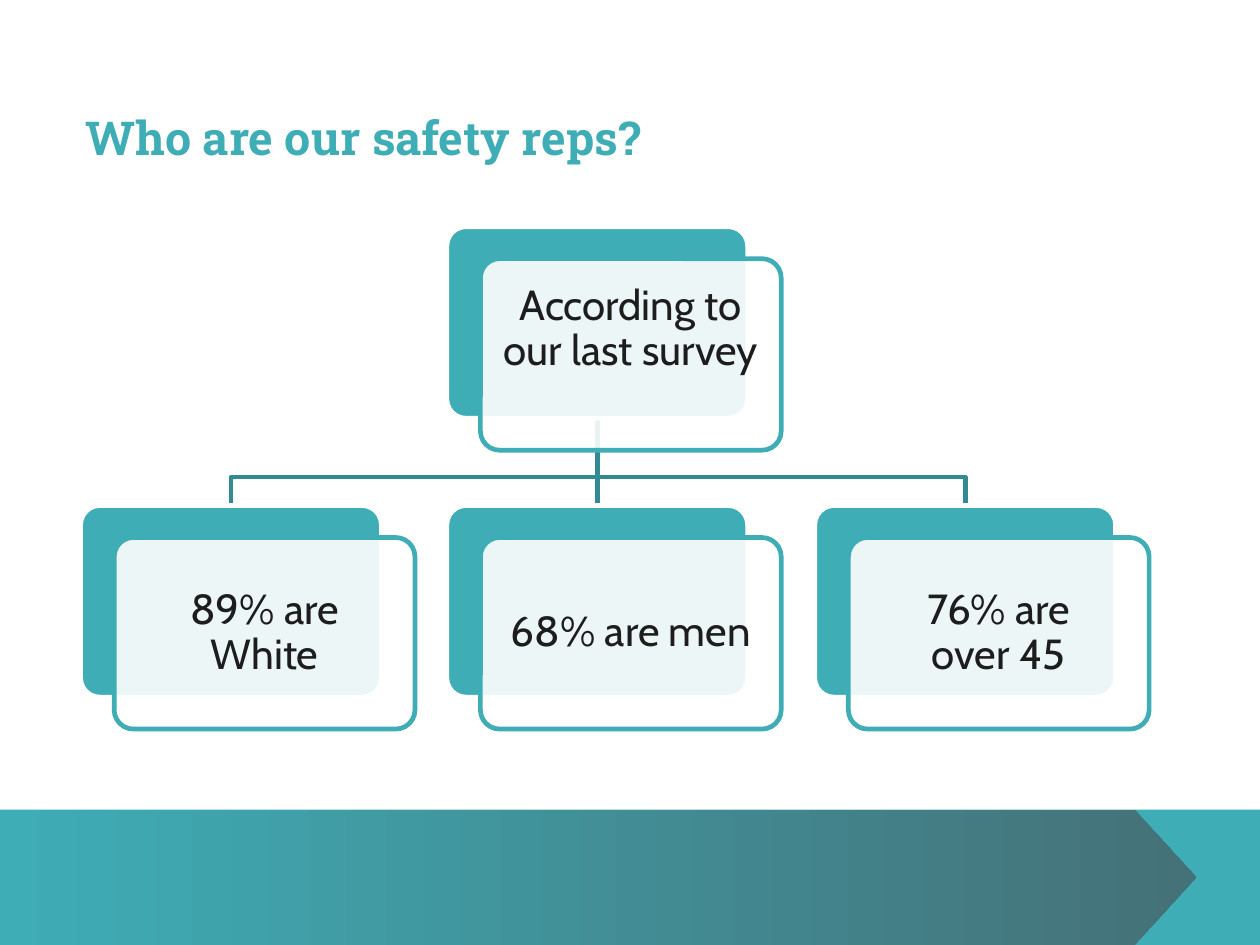
"""Build the safety reps survey slide."""
from lxml import etree
from pptx import Presentation
from pptx.dml.color import RGBColor
from pptx.enum.shapes import MSO_CONNECTOR, MSO_SHAPE as Shape
from pptx.enum.text import MSO_ANCHOR as Anchor, PP_ALIGN as Align
from pptx.oxml.ns import qn
from pptx.util import Inches, Pt

COLORS = {"teal": "3EADB6", "slate": "457178", "branch": "328B92",
          "white": "FFFFFF", "text": "1D1D1D"}
SLIDE_WIDTH = 7.5
SLIDE_HEIGHT = SLIDE_WIDTH * 3 / 4
BAND_TOP = 4.82
BAND_HEIGHT = SLIDE_HEIGHT - BAND_TOP
CARD_WIDTH, CARD_HEIGHT = 1.79, 1.14
CARD_OFFSET = 0.2, 0.19
LEFTS = [0.48, 2.66, 4.85]
ROOT_TOP, CHILD_TOP = 1.35, 3.01
BRANCH_TOP, BRANCH_BEND = ROOT_TOP + CARD_HEIGHT, 2.84
CARDS = [
    (LEFTS[1], ROOT_TOP, "According to our last survey\n"),
    (LEFTS[0], CHILD_TOP, "89% are White"),
    (LEFTS[1], CHILD_TOP, "68% are men"),
    (LEFTS[2], CHILD_TOP, "76% are\nover 45"),
]


def color(name):
    return RGBColor.from_string(COLORS[name])


def add_block(kind, left, top, width, height, fill, line=None):
    shape = slide.shapes.add_shape(
        kind, Inches(left), Inches(top), Inches(width), Inches(height))
    shape.shadow.inherit = False
    shape.fill.solid()
    shape.fill.fore_color.rgb = color(fill)
    if line:
        shape.line.color.rgb = color(line)
        shape.line.width = Pt(2)
    else:
        shape.line.fill.background()
    return shape


presentation = Presentation()
presentation.slide_width = Inches(SLIDE_WIDTH)
presentation.slide_height = Inches(SLIDE_HEIGHT)
slide = presentation.slides.add_slide(presentation.slide_layouts[5])

add_block(Shape.RECTANGLE, 0, BAND_TOP, SLIDE_WIDTH, BAND_HEIGHT, "teal")
arrow = add_block(Shape.PENTAGON, 0, BAND_TOP, 7.12, BAND_HEIGHT, "teal")
arrow.adjustments[0] = 0.457
arrow.fill.gradient()
arrow.fill.gradient_angle = 0
for stop, name in zip(arrow.fill.gradient_stops, ["teal", "slate"]):
    stop.color.rgb = color(name)

title = slide.shapes.title
title.left, title.top = Inches(0.51), Inches(0.1)
title.width, title.height = Inches(6.39), Inches(0.88)
frame = title.text_frame
frame.margin_left = frame.margin_right = frame.margin_top = frame.margin_bottom = 0
frame.vertical_anchor = Anchor.BOTTOM
frame.text = "Who are our safety reps?"
paragraph = frame.paragraphs[0]
paragraph.alignment = Align.LEFT
paragraph.font.name = "Roboto Slab"
paragraph.font.size = Pt(20)
paragraph.font.bold = True
paragraph.font.color.rgb = color("teal")

left_center, root_center, right_center = [left + CARD_WIDTH / 2 for left in LEFTS]
trunk = slide.shapes.add_connector(
    MSO_CONNECTOR.STRAIGHT, Inches(root_center), Inches(BRANCH_TOP),
    Inches(root_center), Inches(CHILD_TOP))
etree.SubElement(trunk.element.spPr, qn("a:effectLst"))
branches = [trunk]
for center in (left_center, right_center):
    builder = slide.shapes.build_freeform(
        Inches(root_center), Inches(BRANCH_TOP))
    corners = [(root_center, BRANCH_BEND), (center, BRANCH_BEND), (center, CHILD_TOP)]
    builder.add_line_segments(
        [(Inches(x), Inches(y)) for x, y in corners], close=False)
    branch = builder.convert_to_shape()
    branch.shadow.inherit = False
    branch.fill.background()
    branches.append(branch)
for branch in branches:
    branch.line.color.rgb = color("branch")
    branch.line.width = Pt(2)

for left, top, text in CARDS:
    back = add_block(Shape.ROUNDED_RECTANGLE, left, top,
                     CARD_WIDTH, CARD_HEIGHT, "teal", "white")
    front = add_block(Shape.ROUNDED_RECTANGLE, left + CARD_OFFSET[0], top + CARD_OFFSET[1],
                      CARD_WIDTH, CARD_HEIGHT, "white", "teal")
    back.adjustments[0] = front.adjustments[0] = 0.1
    fill_color = front.element.spPr.find(qn("a:solidFill"))[0]
    etree.SubElement(fill_color, qn("a:alpha"), val="90000")
    frame = front.text_frame
    frame.word_wrap = True
    frame.vertical_anchor = Anchor.MIDDLE
    frame.margin_left = frame.margin_right = Inches(0.07)
    frame.margin_top = frame.margin_bottom = Inches(0.07)
    paragraph = frame.paragraphs[0]
    paragraph.text = text
    paragraph.alignment = Align.CENTER
    paragraph.line_spacing = 0.9
    paragraph.font.name = "Cabin"
    paragraph.font.size = Pt(18)
    paragraph.font.color.rgb = color("text")

presentation.save("out.pptx")
